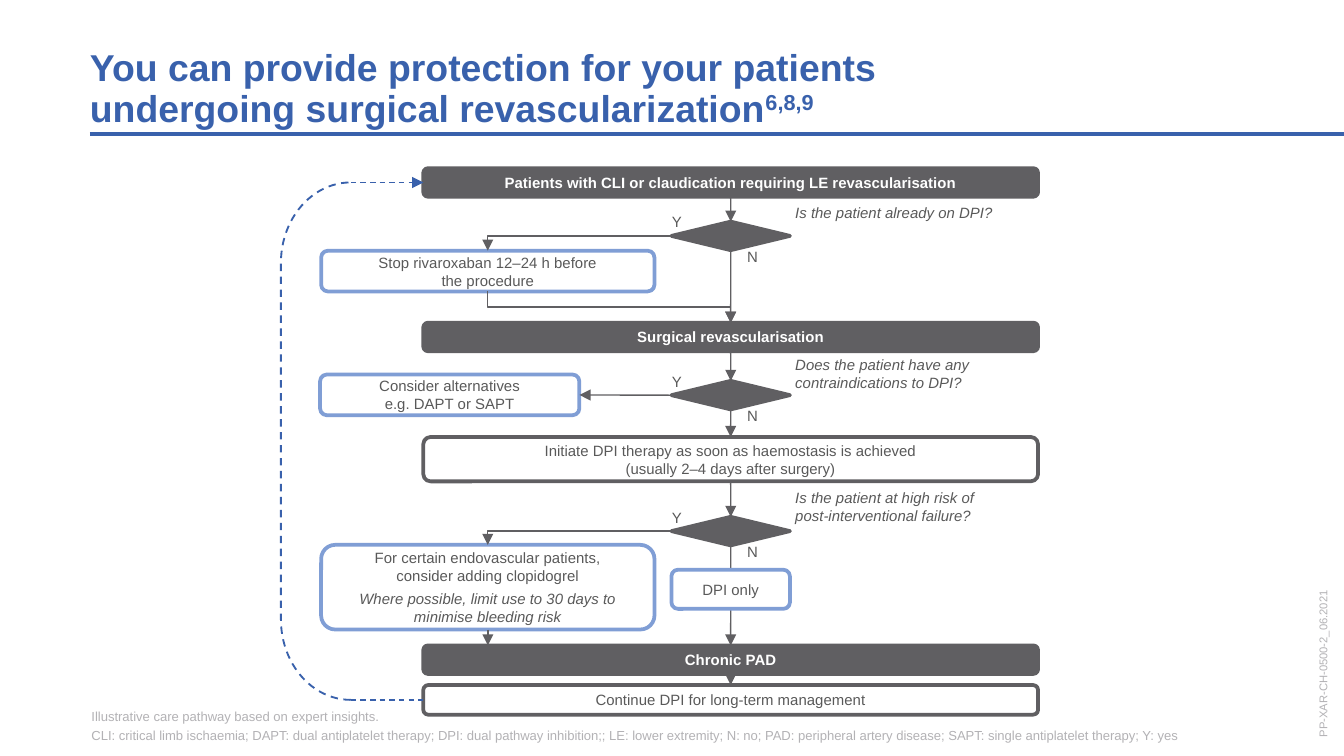
from copy import deepcopy

from lxml import etree
from pptx import Presentation
from pptx.dml.color import RGBColor
from pptx.enum.dml import MSO_LINE
from pptx.enum.shapes import MSO_CONNECTOR, MSO_SHAPE
from pptx.enum.text import MSO_ANCHOR, PP_ALIGN
from pptx.oxml.ns import qn
from pptx.util import Cm, Pt

STRAIGHT, ELBOW = MSO_CONNECTOR.STRAIGHT, MSO_CONNECTOR.ELBOW
ROUNDED, DECISION = MSO_SHAPE.ROUNDED_RECTANGLE, MSO_SHAPE.FLOWCHART_DECISION
BRACKET = MSO_SHAPE.LEFT_BRACKET
CENTER, MIDDLE, BOTTOM = PP_ALIGN.CENTER, MSO_ANCHOR.MIDDLE, MSO_ANCHOR.BOTTOM
DASH = MSO_LINE.DASH
TOP_SIDE, LEFT_SIDE, BOTTOM_SIDE, RIGHT_SIDE = range(4)

BLUE, LIGHT_BLUE, GRAY = "3961AC", "809ED5", "605F62"
TEXT_GRAY, PALE_GRAY, WHITE = "595959", "B3B2B5", "FFFFFF"
rgb = RGBColor.from_string


def write(box, texts, hex_color, para_format=None, **font_format):
    """Fill a shape with one paragraph per text; a vertical tab breaks a line."""
    frame = box.text_frame
    frame.word_wrap = True
    font_format = {"name": "Arial", "size": Pt(8)} | font_format
    for number, text in enumerate(texts):
        para = frame.add_paragraph() if number else frame.paragraphs[0]
        para.text = text
        for name, value in (para_format or {}).items():
            setattr(para, name, value)
        for span in para.runs:
            span.font.color.rgb = rgb(hex_color)
            for name, value in font_format.items():
                setattr(span.font, name, value)
        for line_break in para._p.findall(qn("a:br")):
            line_break.append(deepcopy(para.runs[0]._r.rPr))
    return frame


def outline(item, hex_color, width, dash=None, arrow=False):
    """Set the line of a shape or connector and remove its shadow."""
    item.line.color.rgb = rgb(hex_color)
    item.line.width = Pt(width)
    if dash:
        item.line.dash_style = dash
    properties = item._element.spPr
    if arrow:
        etree.SubElement(properties.find(qn("a:ln")), qn("a:tailEnd"), type="triangle")
    etree.SubElement(properties, qn("a:effectLst"))


deck = Presentation()
deck.slide_width, deck.slide_height = Cm(25.4), Cm(14.29)
page = deck.slides.add_slide(deck.slide_layouts[6])
shapes = page.shapes

# Title and rule
rule = shapes.add_connector(STRAIGHT, Cm(1.7), Cm(2.54), Cm(25.4), Cm(2.54))
outline(rule, BLUE, 2.25)

no_margins = dict.fromkeys(
    ("margin_left", "margin_right", "margin_top", "margin_bottom"), 0)
title = shapes.add_textbox(Cm(1.7), Cm(0.91), Cm(23), Cm(1.55))
title_frame = write(
    title,
    ["You can provide protection for your patients\vundergoing surgical revascularization"],
    BLUE, {"line_spacing": 0.9}, size=Pt(20), bold=True)
reference = deepcopy(title_frame.paragraphs[0].runs[-1]._r)
title_frame.paragraphs[0]._p.append(reference)
reference.rPr.set("baseline", "30000")
title_frame.paragraphs[0].runs[-1].text = "6,8,9"

# Footnotes and document code
notes = shapes.add_textbox(Cm(1.73), Cm(13.39), Cm(23), Cm(0.66))
notes_frame = write(notes, [
    "Illustrative care pathway based on expert insights.",
    "CLI: critical limb ischaemia; DAPT: dual antiplatelet therapy; "
    "DPI: dual pathway inhibition;; LE: lower extremity; N: no; "
    "PAD: peripheral artery disease; SAPT: single antiplatelet therapy; Y: yes",
], PALE_GRAY, {"space_after": Pt(2)}, size=Pt(7))
code = shapes.add_textbox(Cm(23.22), Cm(11.76), Cm(3.56), Cm(0.79))
code.rotation = 270
code_frame = write(code, ["PP-XAR-CH-0500-2_06.2021"], PALE_GRAY, size=Pt(6))
for frame, anchor in ((title_frame, BOTTOM), (notes_frame, BOTTOM), (code_frame, MIDDLE)):
    for name, value in (no_margins | {"vertical_anchor": anchor}).items():
        setattr(frame, name, value)

# Decisions with their questions
axis = 13.81
bar_height = 0.54
steps = {}
for name, top, question_top, question in (
    ("on DPI", 4.19, 3.73, "Is the patient already on DPI?"),
    ("contraindicated", 7.2, 6.6, "Does the patient have any\vcontraindications to DPI?"),
    ("high risk", 9.77, 9.12, "Is the patient at high risk of\vpost-interventional failure?"),
):
    diamond = shapes.add_shape(DECISION, Cm(axis - 1.12), Cm(top), Cm(2.24), Cm(bar_height))
    diamond.fill.solid()
    diamond.fill.fore_color.rgb = rgb(GRAY)
    outline(diamond, GRAY, 2)
    steps[name] = diamond
    for text, left, label_top, width, italic in (
        (question, 14.78, question_top, 6.6, True),
        ("Y", 12.45, top - 0.29, 0.71, False),
        ("N", 13.87, top + 0.36, 0.71, False),
    ):
        label = shapes.add_textbox(Cm(left), Cm(label_top), Cm(width), Cm(0.61))
        write(label, [text], TEXT_GRAY, italic=italic)

# Pathway boxes: fill, line, text colour, bold
bar = (GRAY, GRAY, WHITE, True)
action = (WHITE, GRAY, TEXT_GRAY, False)
option = (WHITE, LIGHT_BLUE, TEXT_GRAY, False)
wide, side = (8, 11.62), (6.07, 6.3)
boxes = (
    ("start", wide, 3.18, bar_height, bar,
     ["Patients with CLI or claudication requiring LE revascularisation"]),
    ("stop", side, 4.74, 0.77, option, ["Stop rivaroxaban 12–24 h before\vthe procedure"]),
    ("surgery", wide, 6.1, bar_height, bar, ["Surgical revascularisation"]),
    ("alternatives", (6.05, 4.9), 7.08, 0.77, option,
     ["Consider alternatives\ve.g. DAPT or SAPT"]),
    ("initiate", wide, 8.26, 0.84, action,
     ["Initiate DPI therapy as soon as haemostasis is achieved\v(usually 2–4 days after surgery)"]),
    ("clopidogrel", side, 10.3, 1.6, option,
     ["For certain endovascular patients,\vconsider adding clopidogrel",
      "Where possible, limit use to 30 days to minimise bleeding risk"]),
    ("chronic", wide, 12.2, bar_height, bar, ["Chronic PAD"]),
    ("continue", wide, 12.95, 0.56, action, ["Continue DPI for long-term management"]),
    ("DPI only", (axis - 1.12, 2.24), 10.77, 0.74, option, ["DPI only"]),
)
for name, (left, width), top, height, (fill, line, text_color, bold), texts in boxes:
    box = shapes.add_shape(ROUNDED, Cm(left), Cm(top), Cm(width), Cm(height))
    box.fill.solid()
    box.fill.fore_color.rgb = rgb(fill)
    outline(box, line, 2)
    frame = write(box, texts, text_color, {"alignment": CENTER, "space_after": Pt(3)}, bold=bold)
    frame.vertical_anchor = MIDDLE
    steps[name] = box
for span in steps["clopidogrel"].text_frame.paragraphs[1].runs:
    span.font.italic = True

# Arrows between steps
for kind, source, source_side, target, target_side in (
    (STRAIGHT, "start", BOTTOM_SIDE, "on DPI", TOP_SIDE),
    (STRAIGHT, "on DPI", BOTTOM_SIDE, "surgery", TOP_SIDE),
    (ELBOW, "on DPI", LEFT_SIDE, "stop", TOP_SIDE),
    (STRAIGHT, "surgery", BOTTOM_SIDE, "contraindicated", TOP_SIDE),
    (STRAIGHT, "contraindicated", LEFT_SIDE, "alternatives", RIGHT_SIDE),
    (STRAIGHT, "contraindicated", BOTTOM_SIDE, "initiate", TOP_SIDE),
    (STRAIGHT, "initiate", BOTTOM_SIDE, "high risk", TOP_SIDE),
    (ELBOW, "high risk", LEFT_SIDE, "clopidogrel", TOP_SIDE),
    (STRAIGHT, "high risk", BOTTOM_SIDE, "chronic", TOP_SIDE),
    (STRAIGHT, "chronic", BOTTOM_SIDE, "continue", TOP_SIDE),
):
    arrow = shapes.add_connector(kind, 0, 0, 0, 0)
    arrow.begin_connect(steps[source], source_side)
    arrow.end_connect(steps[target], target_side)
    outline(arrow, GRAY, 0.75, arrow=True)
    if kind == ELBOW:
        arrow._element.spPr.find(qn("a:prstGeom")).set("prst", "bentConnector2")

side_axis = 9.22
clopidogrel_arrow = shapes.add_connector(
    STRAIGHT, Cm(side_axis), Cm(11.9), Cm(side_axis), Cm(12.2))
clopidogrel_arrow.begin_connect(steps["clopidogrel"], BOTTOM_SIDE)
outline(clopidogrel_arrow, GRAY, 0.75, arrow=True)

# The elbow leaves downwards, so it is laid out sideways and turned
rejoin = shapes.add_connector(ELBOW, Cm(11.81), Cm(3.51), Cm(11.22), Cm(8.1))
rejoin._element.spPr.find(qn("a:xfrm")).set("rot", "16200000")
outline(rejoin, GRAY, 0.75, arrow=True)

# The DPI only box covers the arrow that passes behind it
shapes._spTree.append(steps["DPI only"]._element)

# Dashed return loop
loop_top, loop_bottom, loop_right = 3.45, 13.23, 6.63
loop = shapes.add_shape(
    BRACKET, Cm(5.31), Cm(loop_top), Cm(1.32), Cm(loop_bottom - loop_top))
loop.adjustments[0] = 1.15
loop.fill.background()
outline(loop, BLUE, 1, DASH)
for name, height, has_arrow in (("start", loop_top, True), ("continue", loop_bottom, False)):
    link = shapes.add_connector(STRAIGHT, Cm(loop_right), Cm(height), Cm(8), Cm(height))
    link.end_connect(steps[name], LEFT_SIDE)
    outline(link, BLUE, 0.75, DASH, has_arrow)

deck.save("out.pptx")
